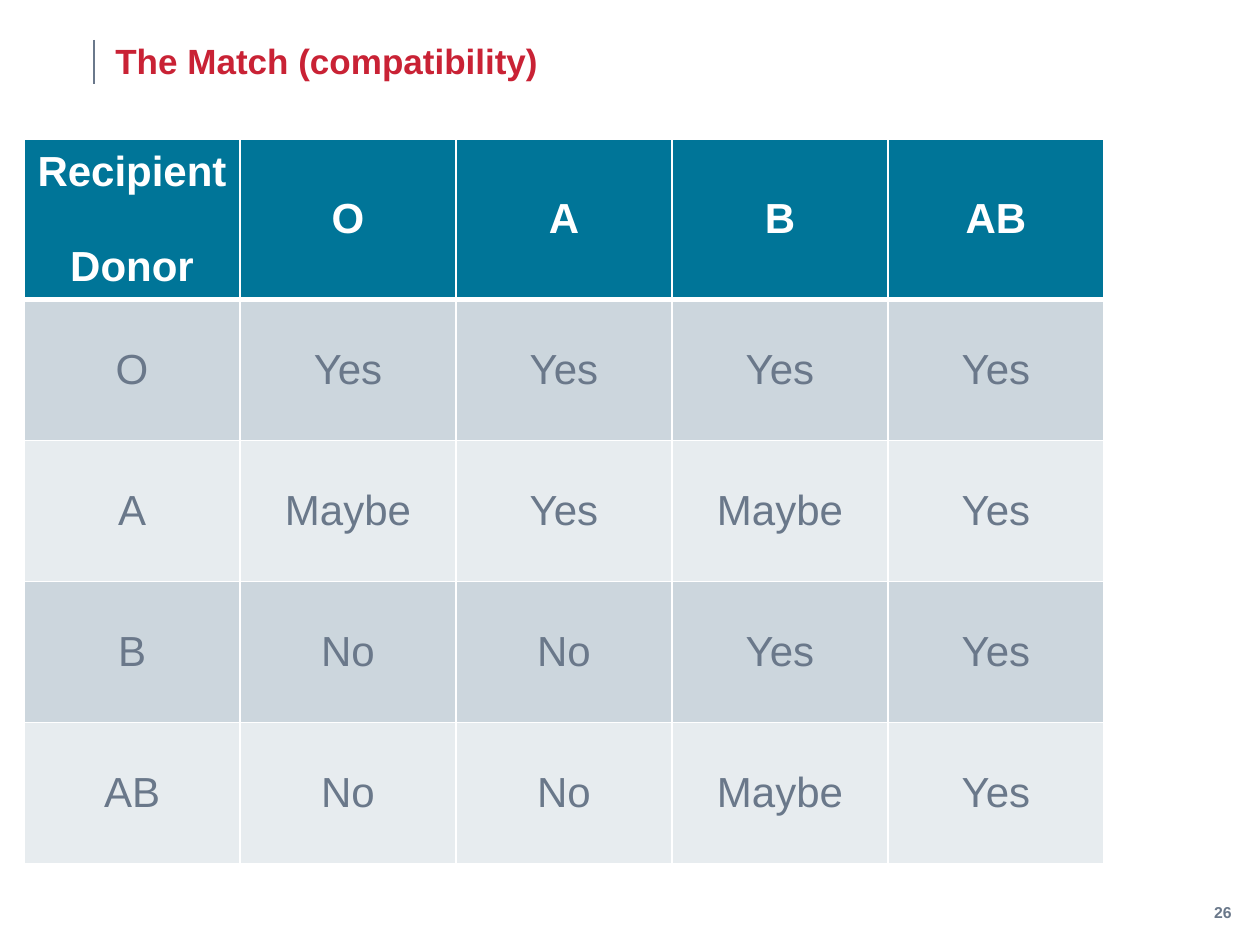
from lxml import etree
from pptx import Presentation
from pptx import util as u
from pptx.dml import color
from pptx.enum import shapes, text
from pptx.oxml import ns

COLORS = {
    "white": "FFFFFF",
    "red": "C92235",
    "slate": "6A788A",
    "rule": "6A788B",
    "teal": "007598",
    "band_dark": "CCD6DD",
    "band_light": "E7ECEF",
}
EMU_PER_PX = 914400 / 126
BLOOD_TYPES = ["O", "A", "B", "AB"]
MATCHES = [
    ["Yes", "Yes", "Yes", "Yes"],
    ["Maybe", "Yes", "Maybe", "Yes"],
    ["No", "No", "Yes", "Yes"],
    ["No", "No", "Maybe", "Yes"],
]


def px(length):
    return u.Emu(round(length * EMU_PER_PX))


def rgb(name):
    return color.RGBColor.from_string(COLORS[name])


def write_text(frame, content, size=24, ink="slate", bold=False,
               align=text.PP_ALIGN.LEFT, line_spacing=None, gap=0):
    for index, line in enumerate(content.split("\n")):
        paragraph = frame.add_paragraph() if index else frame.paragraphs[0]
        paragraph.alignment = align
        if line_spacing:
            paragraph.line_spacing = line_spacing
        if index and gap:
            paragraph.space_before = u.Pt(gap)
        run = paragraph.add_run()
        run.text = line
        run.font.name = "Arial"
        run.font.size = u.Pt(size)
        run.font.bold = bold
        run.font.color.rgb = rgb(ink)


class SlideBuilder:
    def __init__(self, slide, font_ink="slate", border_ink="white"):
        self.slide = slide
        self.font_ink = font_ink
        self.border_ink = border_ink

    def text_box(self, left, top, width, height, content, **style):
        shape = self.slide.shapes.add_textbox(px(left), px(top), px(width), px(height))
        frame = shape.text_frame
        frame.word_wrap = True
        frame.vertical_anchor = text.MSO_ANCHOR.MIDDLE
        write_text(frame, content, **{"ink": self.font_ink, **style})

    def line(self, start, end, ink, weight):
        connector = self.slide.shapes.add_connector(
            shapes.MSO_CONNECTOR.STRAIGHT, *map(px, start + end))
        connector.line.color.rgb = rgb(ink)
        connector.line.width = u.Pt(weight)
        etree.SubElement(connector._element.spPr, ns.qn("a:effectLst"))

    def border(self, cell, side, weight):
        properties = cell._tc.get_or_add_tcPr()
        edge = etree.SubElement(properties, ns.qn(f"a:ln{side}"), w=str(u.Pt(weight)))
        fill = etree.SubElement(edge, ns.qn("a:solidFill"))
        etree.SubElement(fill, ns.qn("a:srgbClr"), val=COLORS[self.border_ink])

    def cell(self, cell, content, fill, top=1, bottom=1, **style):
        cell.vertical_anchor = text.MSO_ANCHOR.MIDDLE
        for side, weight in {"L": 1, "R": 1, "T": top, "B": bottom}.items():
            self.border(cell, side, weight)
        cell.fill.solid()
        cell.fill.fore_color.rgb = rgb(fill)
        write_text(cell.text_frame, content, align=text.PP_ALIGN.CENTER, **style)

    def table(self, left, top, column_width, header_height, row_height, rows):
        columns = len(rows[0])
        height = header_height + row_height * (len(rows) - 1)
        table = self.slide.shapes.add_table(
            len(rows), columns, px(left), px(top),
            px(column_width * columns), px(height)).table
        for column in table.columns:
            column.width = px(column_width)
        for index, values in enumerate(rows):
            table.rows[index].height = px(row_height if index else header_height)
            if index == 0:
                style = {"fill": "teal", "ink": "white", "bold": True, "bottom": 3, "gap": 27}
            else:
                style = {"fill": "band_dark" if index % 2 else "band_light",
                         "ink": self.font_ink, "top": 3 if index == 1 else 1}
            for column, value in enumerate(values):
                self.cell(table.cell(index, column), value, **style)


def main():
    presentation = Presentation()
    presentation.slide_width = px(1260)
    presentation.slide_height = px(945)
    builder = SlideBuilder(presentation.slides.add_slide(presentation.slide_layouts[6]))

    builder.text_box(1144, 896, 100, 32, "26", size=9, bold=True,
                     align=text.PP_ALIGN.RIGHT)
    builder.line((94, 40), (94, 84), "rule", 1.5)
    builder.text_box(103, 39, 1000, 48, "The Match (compatibility)", size=20,
                     ink="red", bold=True, line_spacing=0.9)

    header = ["Recipient\nDonor"] + BLOOD_TYPES
    body = [[donor] + answers for donor, answers in zip(BLOOD_TYPES, MATCHES)]
    builder.table(24, 139, 216, 152, 141, [header] + body)

    presentation.save("out.pptx")


if __name__ == "__main__":
    main()
